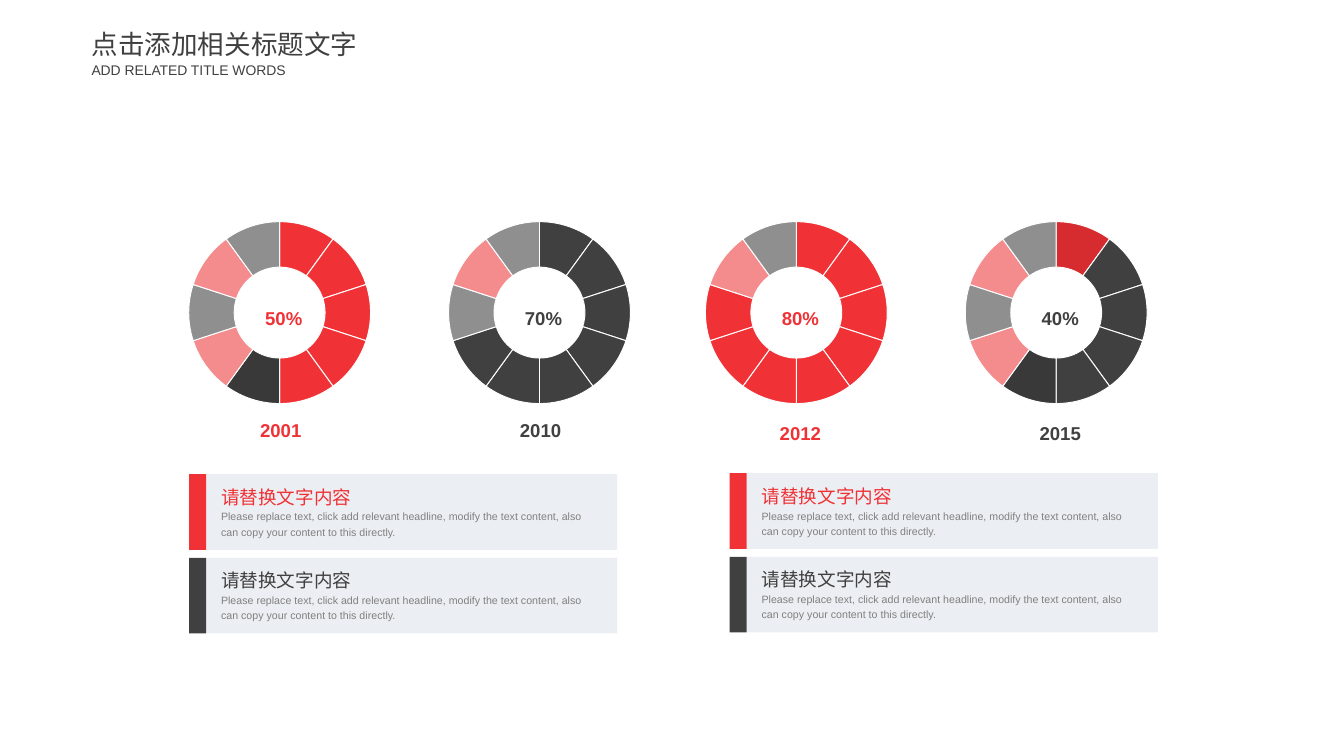
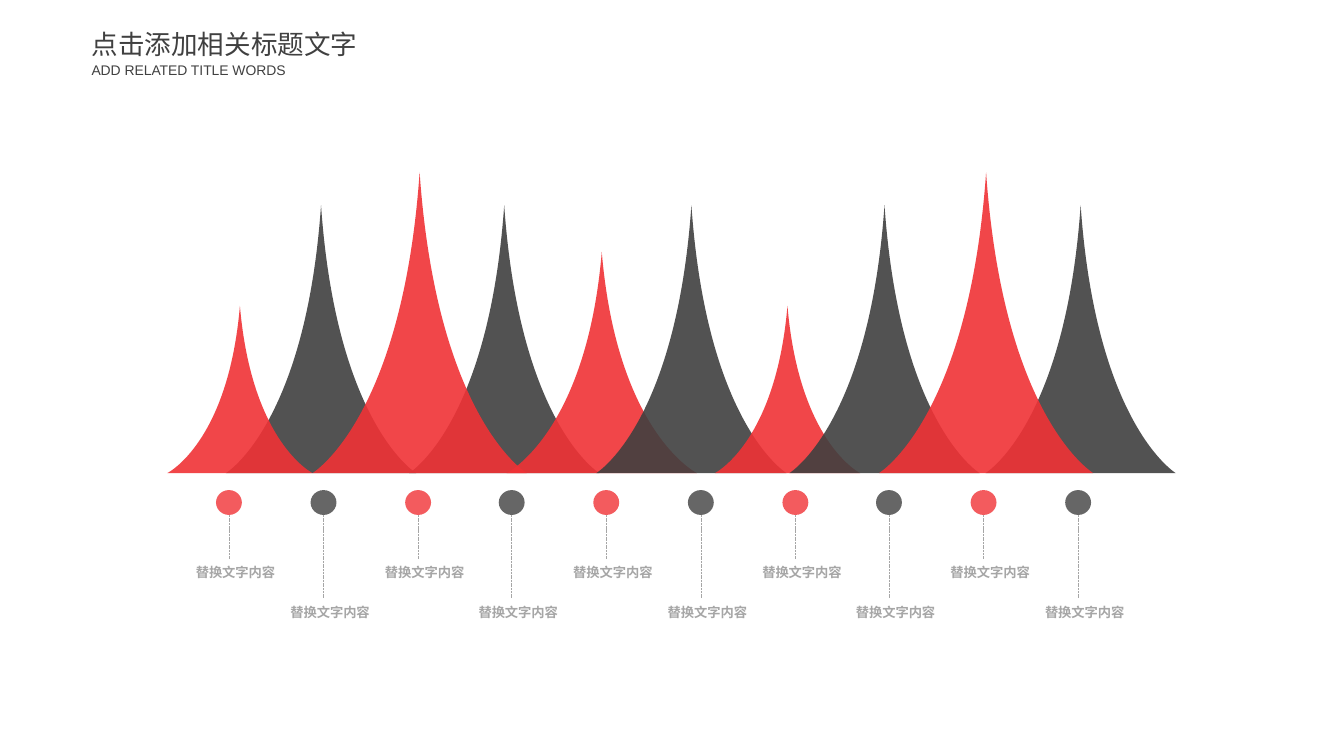
from lxml.etree import SubElement as Sub
from pptx import Presentation
from pptx.chart.data import CategoryChartData as Data
from pptx.dml.color import RGBColor as Rgb
from pptx.enum.chart import XL_CHART_TYPE as Kind
from pptx.enum.dml import MSO_LINE as Dash
from pptx.enum.shapes import MSO_CONNECTOR as Link, MSO_SHAPE as Form
from pptx.enum.text import MSO_ANCHOR as Anchor, MSO_AUTO_SIZE as Fit, PP_ALIGN as Align
from pptx.oxml import parse_xml
from pptx.oxml.ns import nsdecls, qn
from pptx.util import Pt

SCALE = 9525
FONT = "Arial"
HUES = {
    "red": "F03236",
    "dark": "404040",
    "pink": "F48B8D",
    "gray": "8F8F8F",
    "wine": "D62C30",
    "coal": "393939",
    "pale": "EBEEF2",
    "body": "808080",
    "note": "A6A6A6",
    "white": "FFFFFF",
}
KEYS = {"r": "red", "d": "dark", "p": "pink", "g": "gray", "w": "wine", "c": "coal"}
HEAD = "请替换文字内容"
BODY = ("Please replace text, click add relevant headline, modify the text content, "
        "also can copy your content to this directly.")
LABEL = "替换文字内容"
RINGS = [
    (177, "rrrrrcpgpg", "50%", "2001", "red"),
    (438, "dddddddgpg", "70%", "2010", "dark"),
    (696, "rrrrrrrrpg", "80%", "2012", "red"),
    (957, "wddddcpgpg", "40%", "2015", "dark"),
]
SIZES = {"small": (146, 168), "mid": (191, 222), "large": (191, 269), "tall": (215, 302)}
PEAKS = [
    (227, "large", "dark"),
    (411, "large", "dark"),
    (168, "small", "red"),
    (314, "tall", "red"),
    (509, "mid", "red"),
    (599, "large", "dark"),
    (718, "small", "red"),
    (793, "large", "dark"),
    (990, "large", "dark"),
    (883, "tall", "red"),
]
CURVES = [
    [(1, 1), (0.58, 0.82), (0.5, 0)],
    [(0.42, 0.82), (0, 1), (0, 1)],
]


def px(*nums):
    return [round(num * SCALE) for num in nums]


def tint(hue):
    return Rgb.from_string(HUES[hue])


class Deck:
    def __init__(self):
        self.deck = Presentation()
        self.deck.slide_width, self.deck.slide_height = px(1350, 759)

    def page(self):
        self.items = self.deck.slides.add_slide(self.deck.slide_layouts[6]).shapes

    def title(self):
        self.text((92, 28, 269, 33), [("点击添加相关标题文字", 20, "dark")], wrap=False)
        self.text((92, 62, 200, 17), [("ADD RELATED TITLE WORDS", 10.5, "dark")], wrap=False)

    def text(self, box, rows, wrap=True, bold=False, mid=False, space=None, inset=0):
        frame = self.items.add_textbox(*px(*box)).text_frame
        frame.text = "\n".join(row[0] for row in rows)
        frame.word_wrap = wrap
        frame.auto_size = Fit.SHAPE_TO_FIT_TEXT
        frame.margin_left, frame.margin_right = px(inset, inset)
        frame.margin_top, frame.margin_bottom = px(inset / 2, inset / 2)
        frame.vertical_anchor = Anchor.MIDDLE if inset else Anchor.TOP
        for para, (_, size, hue) in zip(frame.paragraphs, rows):
            para.alignment = Align.CENTER if mid else Align.LEFT
            para.line_spacing = space
            font = para.runs[0].font
            font.name, font.size, font.bold = FONT, Pt(size), bold
            font.color.rgb = tint(hue)

    def paint(self, item, hue, alpha=100):
        item.shadow.inherit = False
        item.line.fill.background()
        item.fill.solid()
        item.fill.fore_color.rgb = tint(hue)
        if alpha < 100:
            color = item._element.spPr.find(qn("a:solidFill"))[0]
            Sub(color, qn("a:alpha")).set("val", str(alpha * 1000))

    def shape(self, form, box, hue, alpha=100):
        self.paint(self.items.add_shape(form, *px(*box)), hue, alpha)

    def ring(self, left, code):
        data = Data()
        data.categories = [str(num + 1) for num in range(len(code))]
        data.add_series("Series 1", [10] * len(code))
        chart = self.items.add_chart(Kind.DOUGHNUT, *px(left, 204, 210, 222), data).chart
        chart.has_legend = chart.has_title = False
        chart.font.name, chart.font.size = FONT, Pt(18)
        chart.font.color.rgb = Rgb(0, 0, 0)
        plot = chart.plots[0]
        plot.vary_by_categories = True
        plot._element.find(qn("c:holeSize")).set("val", "80")
        area = chart._chartSpace.chart.plotArea
        for old in area.findall(qn("c:layout")):
            area.remove(old)
        area.insert(0, parse_xml(
            f'<c:layout {nsdecls("c")}><c:manualLayout><c:layoutTarget val="inner"/>'
            '<c:xMode val="edge"/><c:yMode val="edge"/><c:x val="0.06"/><c:y val="0.08"/>'
            '<c:w val="0.87"/><c:h val="0.83"/></c:manualLayout></c:layout>'))
        for num, key in enumerate(code):
            look = plot.series[0].points[num].format
            look.fill.solid()
            look.fill.fore_color.rgb = tint(KEYS[key])
            look.line.color.rgb = tint("white")
            look.line.width = Pt(0.75)

    def card(self, left, top, hue):
        self.shape(Form.RECTANGLE, (left + 17, top, 413, 76), "pale")
        self.shape(Form.RECTANGLE, (left, top, 17, 76), hue)
        rows = [(HEAD, 14, hue), (BODY, 8, "body")]
        self.text((left + 32, top + 7, 374, 59), rows, space=1.2)

    def peak(self, left, size, hue, base=475):
        wide, high = SIZES[size]
        right, top = left + wide, base - high
        pen = self.items.build_freeform(*px(right, base), scale=1.0)
        pen.add_line_segments([px(left + wide / 2, top), px(left, base)], close=False)
        pen.add_line_segments([px(right, base)], close=True)
        item = pen.convert_to_shape()
        lines = list(item._element.iter(qn("a:lnTo")))
        for line, curve in zip(lines, CURVES):
            bend = line.makeelement(qn("a:cubicBezTo"))
            for x, y in curve:
                spot = Sub(bend, qn("a:pt"))
                for name, val in zip("xy", px(x * wide, y * high)):
                    spot.set(name, str(val))
            line.getparent().replace(line, bend)
        self.paint(item, hue, 90)

    def stem(self, x, top, end):
        line = self.items.add_connector(Link.STRAIGHT, *px(x, top, x, end))
        line.line.color.rgb = tint("note")
        line.line.width = Pt(0.5)
        line.line.dash_style = Dash.SQUARE_DOT
        Sub(line._element.spPr, qn("a:effectLst"))

    def mark(self, x, hue, end):
        self.shape(Form.OVAL, (x - 13, 492, 26, 25), hue, 80)
        self.stem(x, 517, end)
        self.text((x - 34, end + 2, 81, 19), [(LABEL, 10, "note")],
                  wrap=False, bold=True, mid=True, space=1.2)


def main():
    deck = Deck()
    deck.page()
    for num, (left, code, share, year, hue) in enumerate(RINGS):
        deck.ring(left, code)
        deck.text((left + 67, 299, 82, 36), [(share, 14, hue)],
                  bold=True, mid=True, space=1.2, inset=10)
        deck.text((259 + 261 * num, 416 + num // 2 * 3, 46, 27), [(year, 14, hue)],
                  wrap=False, bold=True, mid=True, space=1.2)
    for col in range(2):
        for row, hue in enumerate(("red", "dark")):
            deck.card(190 + 543 * col, 476 + 84 * row - col, hue)
    deck.title()

    deck.page()
    for peak in PEAKS:
        deck.peak(*peak)
    for num in range(10):
        hue, end = (("red", 561), ("dark", 601))[num % 2]
        deck.mark(230 + round(853 * num / 9), hue, end)
    deck.title()
    deck.deck.save("out.pptx")


if __name__ == "__main__":
    main()
